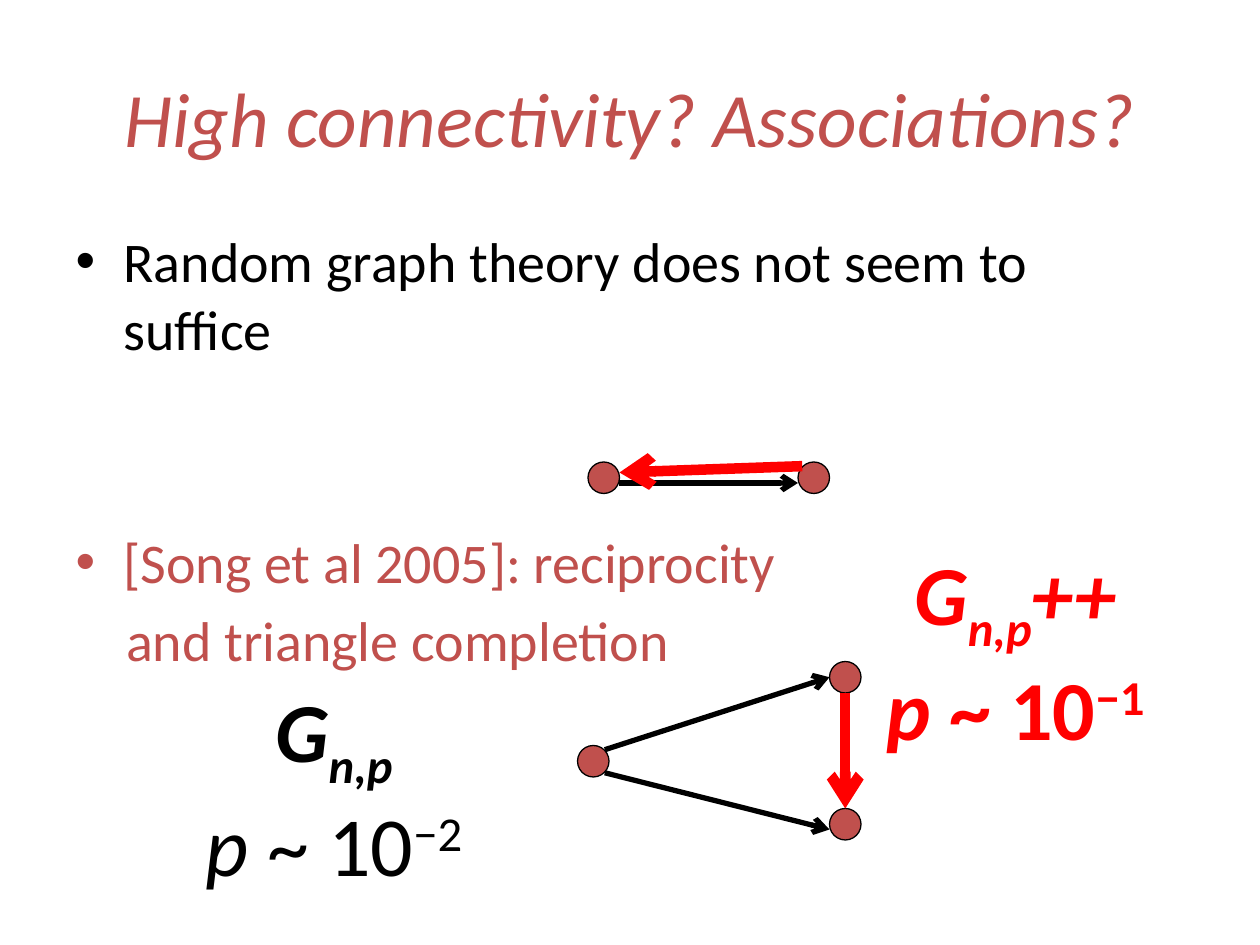
from lxml.etree import SubElement
from pptx import Presentation
from pptx.dml.color import RGBColor
from pptx.enum.shapes import MSO_CONNECTOR as CONN, MSO_SHAPE as SHAPE
from pptx.enum.text import MSO_ANCHOR as ANCHOR, MSO_AUTO_SIZE as FIT, PP_ALIGN as ALIGN
from pptx.oxml.ns import qn
from pptx.util import Inches, Pt

BRICK, RED, BLACK = "C0504D", "FF0000", "000000"
SUB, SUP = -25, 30  # baseline shifts in percent
NODE = 3  # node diameter in grid cells


def grid(*cells):
    """Lengths on a grid of twelve cells to the inch."""
    return [Inches(c / 12) for c in cells]


def rgb(value):
    return RGBColor.from_string(value)


def add_run(p, text, size, color, bold=False, italic=False, base=0):
    r = p.add_run()
    r.text = text
    font = r.font
    font.name, font.size = "Calibri", Pt(size)
    font.bold, font.italic = bold, italic
    font.color.rgb = rgb(color)
    if base:
        r._r.get_or_add_rPr().set("baseline", str(base * 1000))


def place(sp, left, top, width, height):
    sp.left, sp.top, sp.width, sp.height = grid(left, top, width, height)
    sp.text_frame.auto_size = FIT.NONE
    return sp.text_frame


def fill_title(sp, text):
    tf = place(sp, 6, 3.6, 108, 15)
    tf.vertical_anchor = ANCHOR.MIDDLE
    p = tf.paragraphs[0]
    p.alignment = ALIGN.CENTER
    add_run(p, text, 44, BRICK, italic=True)


def fill_body(sp, items):
    """Each item: text, colour, space before in points, bulleted or not."""
    tf = place(sp, 6, 21, 108, 59.4)
    for i, (text, color, before, bulleted) in enumerate(items):
        p = tf.add_paragraph() if i else tf.paragraphs[0]
        p.space_before = Pt(before)
        pPr = p._p.get_or_add_pPr()
        if bulleted:
            pPr.set("marL", str(Inches(0.38)))
            pPr.set("indent", str(Inches(-0.38)))
            SubElement(pPr, qn("a:buChar")).set("char", "•")
        else:
            pPr.set("marL", str(Inches(0.4)))
            pPr.set("indent", "0")
            SubElement(pPr, qn("a:buNone"))
        add_run(p, text, 32, color)


def add_node(slide, left, top):
    sp = slide.shapes.add_shape(SHAPE.OVAL, *grid(left, top, NODE, NODE))
    sp.shadow.inherit = False
    sp.fill.solid()
    sp.fill.fore_color.rgb = rgb(BRICK)
    sp.line.color.rgb = rgb(BLACK)
    sp.line.width = Pt(0.75)


def add_arrow(slide, start, end, color=BLACK, width=3):
    cx = slide.shapes.add_connector(CONN.STRAIGHT, *grid(*start, *end))
    cx.line.color.rgb = rgb(color)
    cx.line.width = Pt(width)
    SubElement(cx.line._get_or_add_ln(), qn("a:tailEnd")).set("type", "arrow")
    SubElement(cx._element.spPr, qn("a:effectLst"))


def add_formula(slide, left, top, color, suffix, exponent, bold):
    """Model name over its edge probability."""
    box = slide.shapes.add_textbox(*grid(left, top, 28.4, 20.6))
    tf = box.text_frame
    tf.word_wrap = False
    tf.auto_size = FIT.SHAPE_TO_FIT_TEXT
    # Runs: text, bold, italic, baseline
    model = [("G", True, True, 0), ("n,p", True, True, SUB)]
    if suffix:
        model.append((suffix, True, True, 0))
    probability = [("p ", bold, True, 0), ("~ 10", bold, False, 0),
                   (exponent, bold, False, SUP)]
    for p, runs in ((tf.paragraphs[0], model), (tf.add_paragraph(), probability)):
        p.alignment = ALIGN.CENTER
        for text, *style in runs:
            add_run(p, text, 48, color, *style)


def main():
    prs = Presentation()
    prs.slide_width, prs.slide_height = Inches(10), Inches(7.5)
    slide = prs.slides.add_slide(prs.slide_layouts[1])

    # Title and list
    fill_title(slide.shapes.title, "High connectivity? Associations?")
    fill_body(slide.placeholders[1], [
        ("Random graph theory does not seem to suffice", BLACK, 6, True),
        ("[Song et al 2005]: reciprocity", BRICK, 95, True),
        ("and triangle completion", BRICK, 6, False),
    ])

    # Nodes of the reciprocal pair, then of the triangle
    for left, top in ((56, 44), (76, 44), (55, 71), (79, 77), (79, 63)):
        add_node(slide, left, top)

    # Given edges in black, completing edges in red
    add_arrow(slide, (59, 46), (76, 46))
    add_arrow(slide, (57.6, 71.4), (79, 64.5))
    add_arrow(slide, (57.6, 73.6), (79, 79))
    add_arrow(slide, (80.5, 66), (80.5, 77), RED, 6)
    add_arrow(slide, (76.4, 44.4), (59, 45), RED, 6)

    # Random graph models
    add_formula(slide, 82.5, 51, RED, "++", "−1", True)
    add_formula(slide, 17.6, 64, BLACK, "", "−2", False)

    prs.save("out.pptx")


if __name__ == "__main__":
    main()
